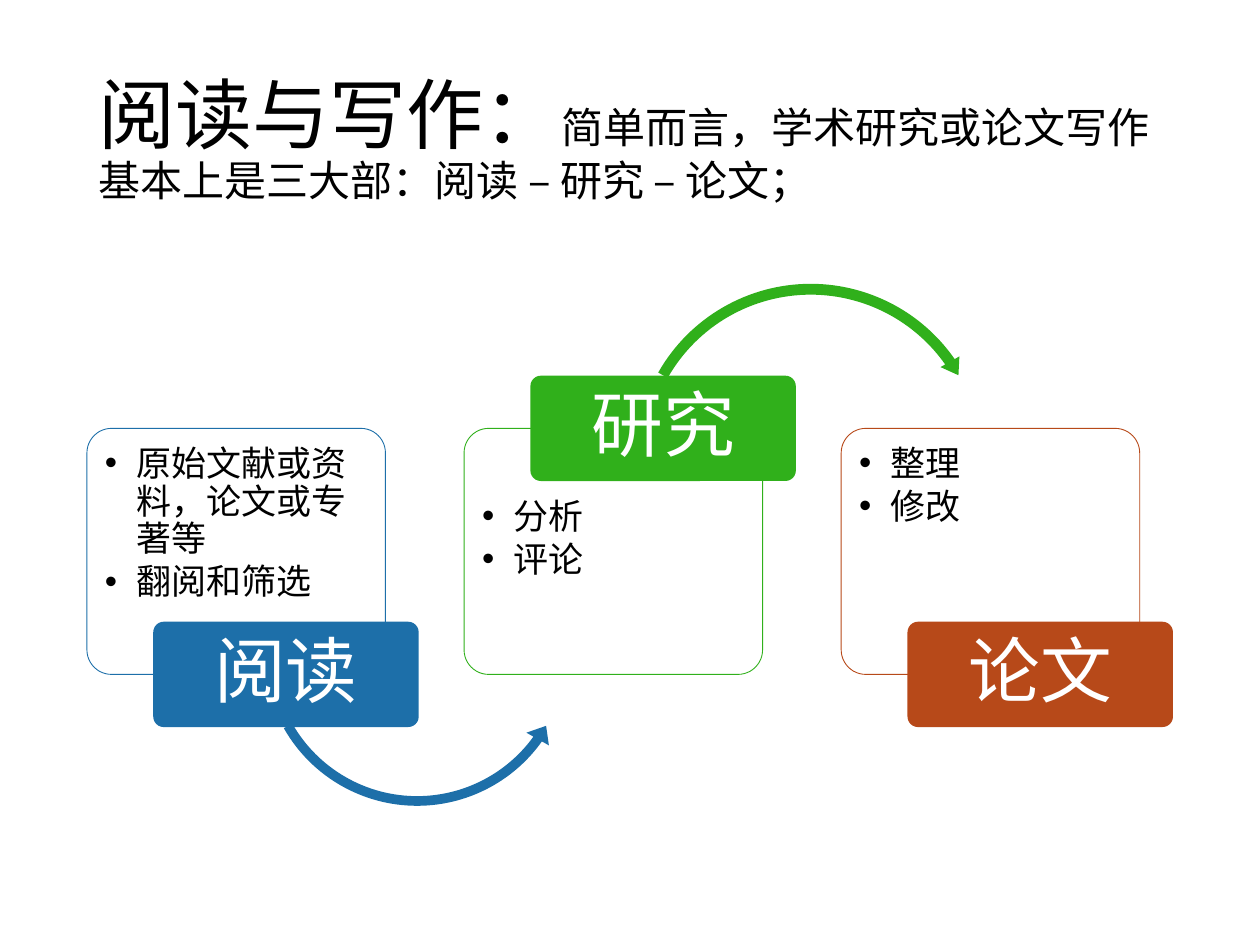
from dataclasses import dataclass

from lxml.etree import SubElement
from pptx import Presentation
from pptx.dml.color import RGBColor as RGB
from pptx.enum.shapes import MSO_SHAPE as SHAPE
from pptx.enum.text import MSO_ANCHOR as ANCHOR, PP_ALIGN as ALIGN
from pptx.oxml.ns import qn
from pptx.util import Pt


@dataclass(frozen=True)
class Theme:
    font: str = "Times New Roman"
    black: RGB = RGB(0x00, 0x00, 0x00)
    white: RGB = RGB(0xFF, 0xFF, 0xFF)
    blue: RGB = RGB(0x1D, 0x6F, 0xA9)
    green: RGB = RGB(0x30, 0xB0, 0x1B)
    rust: RGB = RGB(0xB7, 0x49, 0x19)
    title: int = 44
    subtitle: int = 24
    label: int = 41
    bullet: int = 20


THEME = Theme()


def add_filled(preset, left, top, width, height, fill, adjustments):
    """Add a preset shape with a solid fill and neither outline nor shadow."""
    shape = slide.shapes.add_shape(preset, Pt(left), Pt(top), Pt(width), Pt(height))
    shape.shadow.inherit = False
    shape.fill.solid()
    shape.fill.fore_color.rgb = fill
    shape.line.fill.background()
    for index, value in enumerate(adjustments):
        shape.adjustments[index] = value
    return shape


def add_text(paragraph, text, size, color):
    run = paragraph.add_run()
    run.text = text
    run.font.name = THEME.font
    run.font.size = Pt(size)
    run.font.color.rgb = color


deck = Presentation()
deck.slide_width, deck.slide_height = Pt(720), Pt(540)
slide = deck.slides.add_slide(deck.slide_layouts[6])

# Title with the summary running on in smaller type
title = slide.shapes.add_textbox(Pt(49.5), Pt(28.75), Pt(621), Pt(104.4)).text_frame
title.word_wrap = True
title.vertical_anchor = ANCHOR.MIDDLE
heading = title.paragraphs[0]
heading.line_spacing = 0.9
add_text(heading, "阅读与写作：", THEME.title, THEME.black)
add_text(heading, "简单而言，学术研究或论文写作基本上是三大部：阅读 – 研究 – 论文；",
         THEME.subtitle, THEME.black)

# Stages: label, colour, label on top edge, bullets, arrow to the next stage
# An arrow is preset, left, top, size, adjustments
to_research = (SHAPE.LEFT_CIRCULAR_ARROW, 146.2, 280.8, 184.3,
               (0.03, 3.63, 21.38, 90.25, 0.04))
to_paper = (SHAPE.CIRCULAR_ARROW, 360, 159.1, 206.6,
            (0.03, 3.22, 195.02, 125.76, 0.03))
stages = [
    ("阅读", THEME.blue, False, ["原始文献或资料，论文或专著等", "翻阅和筛选"], to_research),
    ("研究", THEME.green, True, ["分析", "评论"], to_paper),
    ("论文", THEME.rust, False, ["整理", "修改"], None),
]

FIRST_LEFT, STEP = 49.7, 215.5
PANEL_TOP, PANEL_W, PANEL_H = 244.8, 170.6, 140.6
LABEL_SHIFT, LABEL_W, LABEL_H = 37.9, 151.7, 60.2
ROUNDING = [0.1]
INDENT = 18

panel_format = {"word_wrap": True, "vertical_anchor": ANCHOR.TOP,
                "margin_left": Pt(6.2), "margin_right": Pt(6.2), "margin_bottom": Pt(6)}
label_format = {"word_wrap": True, "vertical_anchor": ANCHOR.MIDDLE,
                "margin_left": Pt(8), "margin_right": Pt(8),
                "margin_top": Pt(6), "margin_bottom": Pt(6)}
bullet_format = {"alignment": ALIGN.LEFT, "line_spacing": 0.9, "space_after": Pt(3)}

for index, (name, color, label_on_top, bullets, arrow) in enumerate(stages):
    left = FIRST_LEFT + index * STEP

    # Outlined panel, 10 % transparent
    panel = add_filled(SHAPE.ROUNDED_RECTANGLE, left, PANEL_TOP, PANEL_W, PANEL_H,
                       THEME.white, ROUNDING)
    panel.line.color.rgb = color
    panel.line.width = Pt(0.5)
    white_fill = panel._element.spPr.find(qn("a:solidFill"))[0]
    SubElement(white_fill, qn("a:alpha"), val="90000")

    # Bullets, starting below the label where it covers the top edge
    body = panel.text_frame
    for key, value in panel_format.items():
        setattr(body, key, value)
    body.margin_top = Pt(6 + LABEL_H / 2 if label_on_top else 6)
    for number, text in enumerate(bullets):
        item = body.add_paragraph() if number else body.paragraphs[0]
        for key, value in bullet_format.items():
            setattr(item, key, value)
        properties = item._p.get_or_add_pPr()
        properties.set("marL", str(Pt(INDENT)))
        properties.set("indent", str(-Pt(INDENT)))
        SubElement(properties, qn("a:buFont"), typeface="Arial")
        SubElement(properties, qn("a:buChar"), char="•")
        add_text(item, text, THEME.bullet, THEME.black)

    # Curved arrow, behind the label
    if arrow:
        preset, arrow_left, arrow_top, size, bend = arrow
        add_filled(preset, arrow_left, arrow_top, size, size, color, bend)

    # Label centred on the panel's top or bottom edge
    edge = PANEL_TOP if label_on_top else PANEL_TOP + PANEL_H
    label = add_filled(SHAPE.ROUNDED_RECTANGLE, left + LABEL_SHIFT, edge - LABEL_H / 2,
                       LABEL_W, LABEL_H, color, ROUNDING)
    for key, value in label_format.items():
        setattr(label.text_frame, key, value)
    caption = label.text_frame.paragraphs[0]
    caption.alignment = ALIGN.CENTER
    caption.line_spacing = 0.9
    add_text(caption, name, THEME.label, THEME.white)

deck.save("out.pptx")
